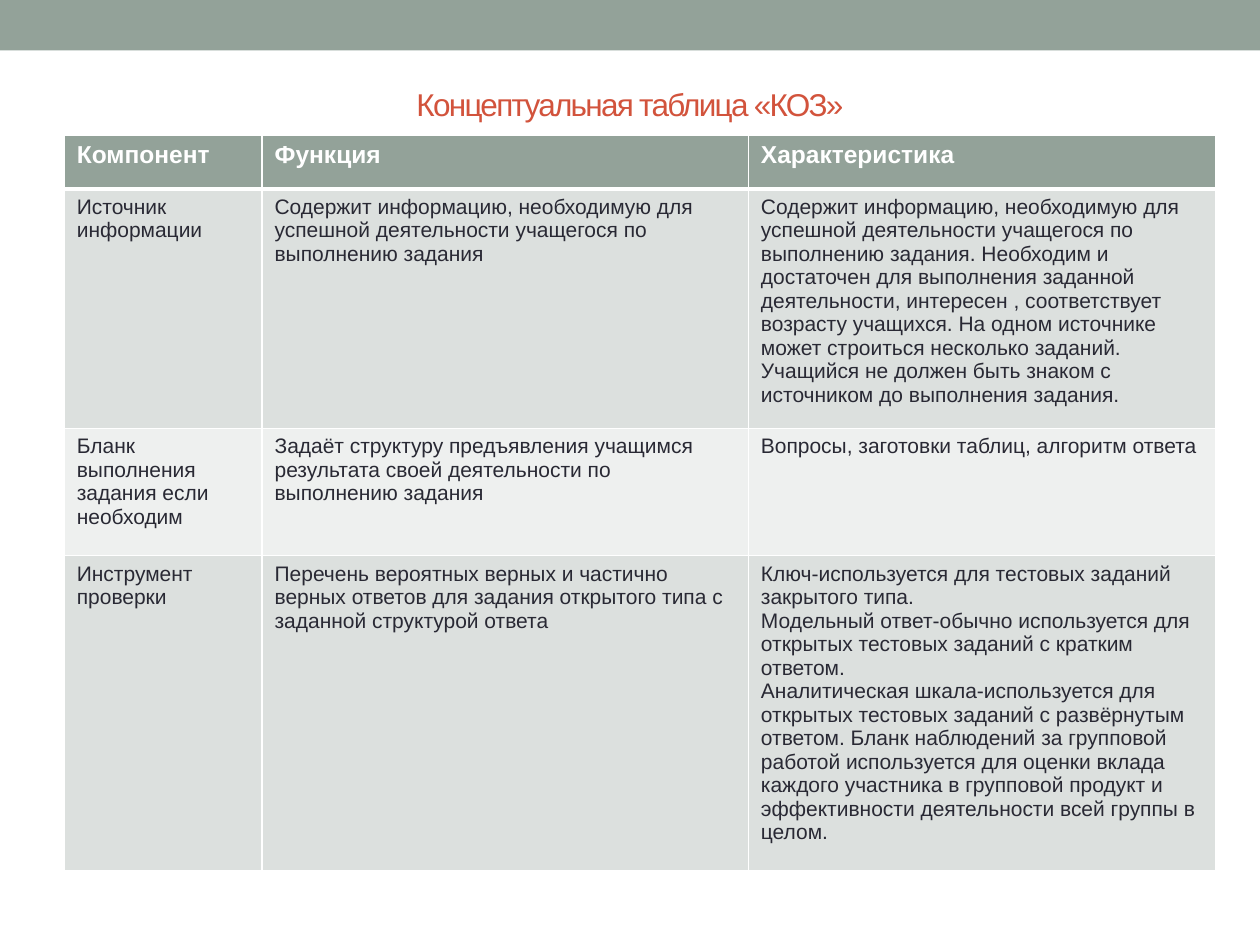
"""Builds a slide with a title band and a three-column concept table."""
from dataclasses import dataclass

from lxml.etree import SubElement
from pptx import Presentation
from pptx.dml.color import RGBColor
from pptx.enum.shapes import MSO_SHAPE
from pptx.enum.text import MSO_ANCHOR, PP_ALIGN
from pptx.oxml.ns import qn
from pptx.util import Inches, Pt


@dataclass(frozen=True)
class Theme:
    face: str = "Arial"
    band: str = "93A299"
    title: str = "D2533C"
    ink: str = "292934"
    white: str = "FFFFFF"
    odd: str = "DCE0DE"
    even: str = "EEF0EF"
    big: int = 18
    mid: int = 14
    small: int = 12
    thin: int = 1
    thick: int = 3


class Deck:
    def __init__(self, theme, wide, high):
        self.theme = theme
        self.show = Presentation()
        self.show.slide_width = Inches(wide)
        self.show.slide_height = Inches(high)
        self.slide = self.show.slides.add_slide(self.show.slide_layouts[6])

    def place(self, left, top, width, height):
        wide, high = self.show.slide_width, self.show.slide_height
        shares = (left, wide), (top, high), (width, wide), (height, high)
        return [round(part * whole) for part, whole in shares]

    def paint(self, fill, color):
        fill.solid()
        fill.fore_color.rgb = RGBColor.from_string(color)

    def label(self, frame, text, size, color, bold=False, align=PP_ALIGN.LEFT):
        frame.text = text
        style = {"name": self.theme.face, "size": Pt(size), "bold": bold}
        for para in frame.paragraphs:
            para.alignment = align
            for run in para.runs:
                for key, value in style.items():
                    setattr(run.font, key, value)
                run.font.color.rgb = RGBColor.from_string(color)

    def band(self, *box):
        bar = self.slide.shapes.add_shape(MSO_SHAPE.RECTANGLE, *self.place(*box))
        bar.shadow.inherit = False
        self.paint(bar.fill, self.theme.band)
        bar.line.fill.background()

    def title(self, text, *box):
        frame = self.slide.shapes.add_textbox(*self.place(*box)).text_frame
        style = {"word_wrap": True, "vertical_anchor": MSO_ANCHOR.MIDDLE}
        for key, value in style.items():
            setattr(frame, key, value)
        self.label(frame, text, self.theme.big, self.theme.title, align=PP_ALIGN.CENTER)
        frame.paragraphs[0].runs[0]._r.get_or_add_rPr().set("spc", "-100")

    def edge(self, cell, sides):
        props = cell._tc.get_or_add_tcPr()
        for side, width in sides.items():
            line = SubElement(props, qn(f"a:ln{side}"), w=str(Pt(width)))
            fill = SubElement(line, qn("a:solidFill"))
            SubElement(fill, qn("a:srgbClr"), val=self.theme.white)

    def table(self, data, cols, rows, left, top):
        look = self.theme
        box = self.place(left, top, sum(cols), sum(rows))
        grid = self.slide.shapes.add_table(len(rows), len(cols), *box).table
        for col, share in zip(grid.columns, cols):
            col.width = round(share * self.show.slide_width)
        for row, share in zip(grid.rows, rows):
            row.height = round(share * self.show.slide_height)
        for i, line in enumerate(data):
            head = i == 0
            size, ink = (look.mid, look.white) if head else (look.small, look.ink)
            back = look.band if head else look.odd if i % 2 else look.even
            sides = dict.fromkeys("LRTB", look.thin)
            if head:
                sides["B"] = look.thick
            elif i == 1:
                sides["T"] = look.thick
            for j, text in enumerate(line):
                cell = grid.cell(i, j)
                self.label(cell.text_frame, text, size, ink, bold=head)
                self.edge(cell, sides)
                self.paint(cell.fill, back)

    def save(self):
        self.show.save("out.pptx")


DATA = [
    ("Компонент", "Функция", "Характеристика"),
    (
        "Источник информации",
        "Содержит информацию, необходимую для успешной деятельности учащегося "
        "по выполнению задания",
        "Содержит информацию, необходимую для успешной деятельности учащегося "
        "по выполнению задания. Необходим и достаточен для выполнения заданной "
        "деятельности, интересен , соответствует возрасту учащихся. На одном "
        "источнике может строиться несколько заданий. Учащийся не должен быть "
        "знаком с источником до выполнения задания.",
    ),
    (
        "Бланк выполнения задания если необходим",
        "Задаёт структуру предъявления учащимся результата своей деятельности "
        "по выполнению задания",
        "Вопросы, заготовки таблиц, алгоритм ответа",
    ),
    (
        "Инструмент проверки",
        "Перечень вероятных верных и частично верных ответов для задания "
        "открытого типа с заданной структурой ответа",
        "Ключ-используется для тестовых заданий закрытого типа.\n"
        "Модельный ответ-обычно используется для открытых тестовых заданий "
        "с кратким ответом.\n"
        "Аналитическая шкала-используется для открытых тестовых заданий "
        "с развёрнутым ответом. Бланк наблюдений за групповой работой "
        "используется для оценки вклада каждого участника в групповой продукт "
        "и эффективности деятельности всей группы в целом.",
    ),
]


def main():
    wide, high = 10, 7.5
    deck = Deck(Theme(), wide, high)
    deck.band(0, 0, 1, 0.4 / high)
    deck.title("Концептуальная таблица «КОЗ»", 0.05, 0.58 / high, 0.9, 0.49 / high)
    cols = [width / wide for width in (1.57, 3.86, 3.71)]
    rows = [height / high for height in (0.43, 1.85, 1.01, 2.34)]
    deck.table(DATA, cols, rows, 0.51 / wide, 1.07 / high)
    deck.save()


if __name__ == "__main__":
    main()
